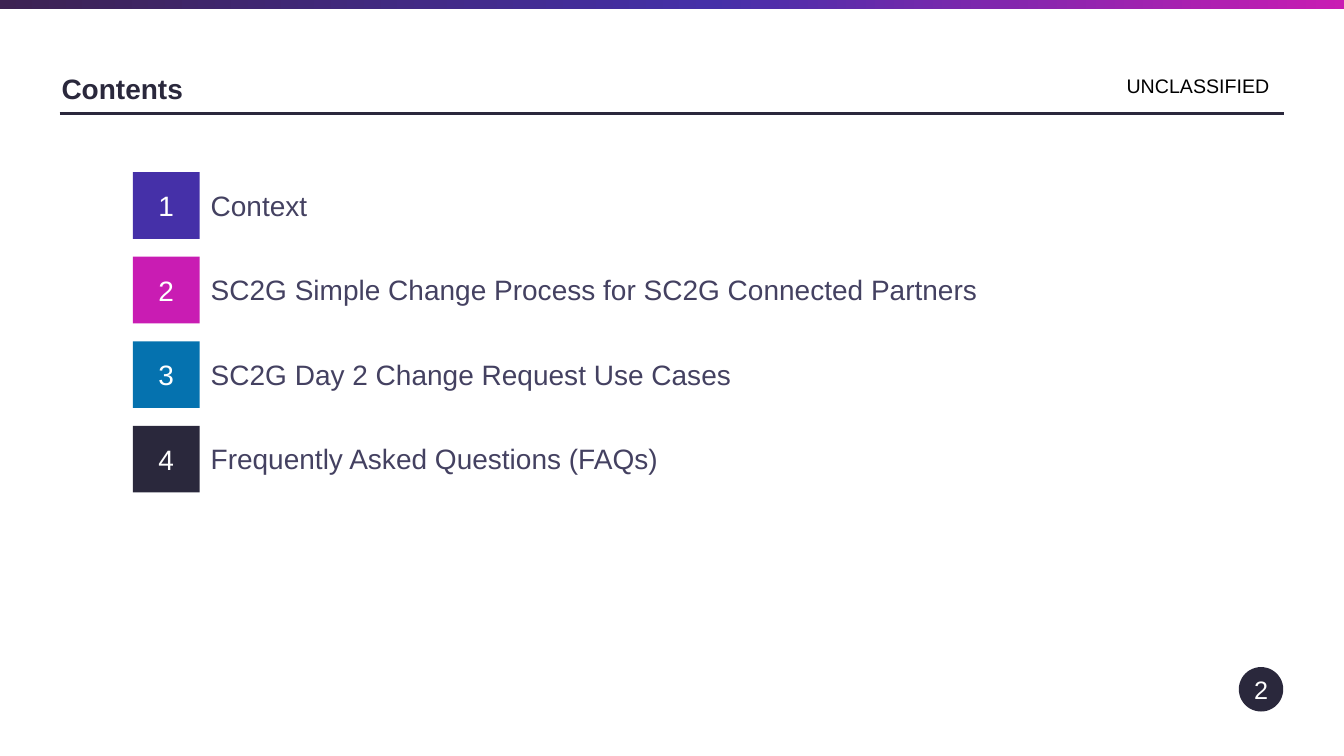
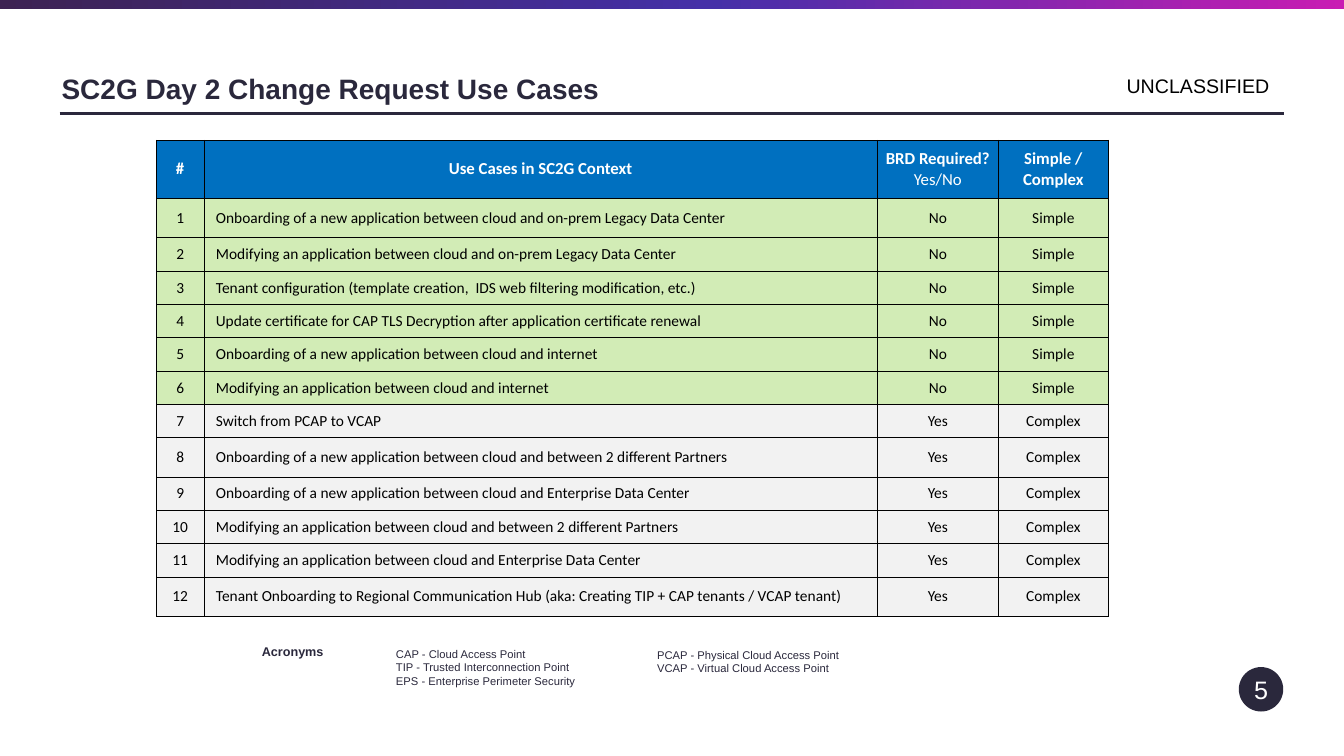
from copy import deepcopy
from dataclasses import dataclass

from lxml import etree
from pptx import Presentation
from pptx.dml.color import RGBColor
from pptx.enum.shapes import MSO_CONNECTOR, MSO_SHAPE
from pptx.enum.text import MSO_ANCHOR, MSO_AUTO_SIZE, PP_ALIGN
from pptx.oxml.ns import qn
from pptx.util import Cm, Pt

LEFT, CENTER = PP_ALIGN.LEFT, PP_ALIGN.CENTER
TOP, MIDDLE = MSO_ANCHOR.TOP, MSO_ANCHOR.MIDDLE
FIXED, GROW = MSO_AUTO_SIZE.NONE, MSO_AUTO_SIZE.SHAPE_TO_FIT_TEXT
RECT, OVAL = MSO_SHAPE.RECTANGLE, MSO_SHAPE.OVAL
STRAIGHT = MSO_CONNECTOR.STRAIGHT
TITLE_ONLY = 5


@dataclass(frozen=True)
class Theme:
    font: str = "Arial"
    table_font: str = "Calibri"
    ink: str = "2A283C"
    label: str = "444161"
    white: str = "FFFFFF"
    black: str = "000000"
    violet: str = "4530A8"
    magenta: str = "C91CB3"
    blue: str = "0572AF"
    band: tuple = ((0, "3D2252"), (0.53, "4530A8"), (1, "C91CB3"))
    header: str = "0070C0"
    simple: str = "D2ECB6"
    complex: str = "F2F2F2"
    heading: int = 20
    page: int = 18
    marking: int = 14
    table_header: int = 12
    table_body: int = 11
    acronym_title: int = 9
    acronym: int = 8


THEME = Theme()
NO_MARGINS = dict(margin_left=0, margin_top=0, margin_right=0, margin_bottom=0)
MARKING = "UNCLASSIFIED"

# label, label width in cm, number colour
CONTENTS = [
    ("Context", 2.97, THEME.violet),
    ("SC2G Simple Change Process for SC2G Connected Partners", 20.19, THEME.magenta),
    ("SC2G Day 2 Change Request Use Cases", 13.74, THEME.blue),
    ("Frequently Asked Questions (FAQs)", 11.86, THEME.ink),
]

USE_CASE_HEADER = [
    [("#", True)],
    [("Use Cases in SC2G Context", True)],
    [("BRD Required?", True), ("Yes/No", False)],
    [("Simple /", True), ("Complex", True)],
]
SIMPLE_CASES = [
    "Onboarding of a new application between cloud and on-prem Legacy Data Center",
    "Modifying an application between cloud and on-prem Legacy Data Center",
    "Tenant configuration (template creation,  IDS web filtering modification, etc.)",
    "Update certificate for CAP TLS Decryption after application certificate renewal",
    "Onboarding of a new application between cloud and internet",
    "Modifying an application between cloud and internet",
]
COMPLEX_CASES = [
    "Switch from PCAP to VCAP",
    "Onboarding of a new application between cloud and between 2 different Partners",
    "Onboarding of a new application between cloud and Enterprise Data Center",
    "Modifying an application between cloud and between 2 different Partners",
    "Modifying an application between cloud and Enterprise Data Center",
    "Tenant Onboarding to Regional Communication Hub (aka: Creating TIP + CAP tenants / VCAP tenant)",
]
CASE_GROUPS = [
    (SIMPLE_CASES, "No", "Simple", THEME.simple),
    (COMPLEX_CASES, "Yes", "Complex", THEME.complex),
]
COLUMN_WIDTHS = (1.2, 16.97, 3.05, 2.77)
HEADER_HEIGHT, ROW_HEIGHT, TALL_ROW_HEIGHT = 1.47, 0.84, 0.99
TALL_ROWS = {1, 8, 12}

# box in cm, lines, size, bold
ACRONYMS = [
    ((6.35, 16.1, 3.76, 0.64), ["Acronyms"], THEME.acronym_title, True),
    ((9.73, 16.18, 9.04, 1.27),
     ["CAP - Cloud Access Point", "TIP - Trusted Interconnection Point",
      "EPS - Enterprise Perimeter Security"], THEME.acronym, False),
    ((16.31, 16.21, 8.23, 0.94),
     ["PCAP - Physical Cloud Access Point", "VCAP - Virtual Cloud Access Point"],
     THEME.acronym, False),
]


def rgb(value):
    return RGBColor.from_string(value)


def cm_box(box):
    return [Cm(length) for length in box]


def set_values(target, values):
    for name, value in values.items():
        setattr(target, name, value)


def write(frame, lines, size, color, bold=False, align=LEFT, font=THEME.font):
    """Fill a text frame, one paragraph per line; a line is text or (text, bold)."""
    for index, line in enumerate(lines):
        text, heavy = line if isinstance(line, tuple) else (line, bold)
        paragraph = frame.add_paragraph() if index else frame.paragraphs[0]
        paragraph.alignment = align
        run = paragraph.add_run()
        run.text = text
        set_values(run.font, dict(name=font, size=Pt(size), bold=heavy))
        run.font.color.rgb = rgb(color)


def add_text(slide, box, lines, size, color, bold=False, wrap=True):
    frame = slide.shapes.add_textbox(*cm_box(box)).text_frame
    set_values(frame, dict(word_wrap=wrap, auto_size=GROW, vertical_anchor=TOP))
    write(frame, lines, size, color, bold)


def add_badge(slide, preset, box, number, size, color):
    badge = slide.shapes.add_shape(preset, *cm_box(box))
    badge.shadow.inherit = False
    badge.fill.solid()
    badge.fill.fore_color.rgb = rgb(color)
    badge.line.fill.background()
    set_values(badge.text_frame, dict(NO_MARGINS, vertical_anchor=MIDDLE))
    write(badge.text_frame, [str(number)], size, THEME.white, align=CENTER)


def dress_layout(layout, slide):
    """Draw the top band and title rule, then move them to the shared layout."""
    band = slide.shapes.add_shape(RECT, *cm_box((-0.02, 0, 33.91, 0.23)))
    band.shadow.inherit = False
    band.line.fill.background()
    band.fill.gradient()
    band.fill.gradient_angle = 0
    stops = band.element.spPr.find(".//" + qn("a:gsLst"))
    stops.insert(1, deepcopy(stops[0]))
    for stop, (position, color) in zip(band.fill.gradient_stops, THEME.band):
        stop.position = position
        stop.color.rgb = rgb(color)

    rule = slide.shapes.add_connector(STRAIGHT, *cm_box((1.5, 2.87, 32.36, 2.87)))
    rule.line.color.rgb = rgb(THEME.ink)
    rule.line.width = Pt(2.25)
    etree.SubElement(rule.element.spPr, qn("a:effectLst"))
    for part in (band, rule):
        layout.element.cSld.spTree.append(part.element)


def add_slide(prs, title, page):
    slide = prs.slides.add_slide(prs.slide_layouts[TITLE_ONLY])
    heading = slide.shapes.title
    places = cm_box((1.55, 1.45, 30.89, 1.4))
    set_values(heading, dict(zip(("left", "top", "width", "height"), places)))
    set_values(heading.text_frame, dict(NO_MARGINS, word_wrap=True,
                                        auto_size=FIXED, vertical_anchor=MIDDLE))
    write(heading.text_frame, [title], THEME.heading, THEME.ink, bold=True)
    heading.text_frame.paragraphs[0].line_spacing = 1.2
    add_text(slide, (28.14, 1.73, 4.19, 0.86), [MARKING], THEME.marking, THEME.black)
    add_badge(slide, OVAL, (31.22, 16.81, 1.12, 1.12), page, THEME.page, THEME.ink)
    return slide


def add_contents(slide):
    left, top, side, pitch = 3.35, 4.34, 1.68, 2.13
    for index, (label, width, color) in enumerate(CONTENTS):
        y = top + index * pitch
        add_badge(slide, RECT, (left, y, side, side), index + 1, THEME.heading, color)
        add_text(slide, (5.06, y + 0.28, width, 1.12), [label],
                 THEME.heading, THEME.label, wrap=False)


def add_borders(cell):
    properties = cell._tc.get_or_add_tcPr()
    for index, edge in enumerate(("a:lnL", "a:lnR", "a:lnT", "a:lnB")):
        line = etree.Element(qn(edge), w=str(Pt(0.5)))
        fill = etree.SubElement(line, qn("a:solidFill"))
        etree.SubElement(fill, qn("a:srgbClr"), val=THEME.black)
        properties.insert(index, line)


def add_use_cases(slide):
    rows = [(USE_CASE_HEADER, THEME.header)]
    for cases, required, kind, color in CASE_GROUPS:
        for case in cases:
            rows.append(([[str(len(rows))], [case], [required], [kind]], color))
    heights = [HEADER_HEIGHT] + [TALL_ROW_HEIGHT if number in TALL_ROWS else ROW_HEIGHT
                                 for number in range(1, len(rows))]
    box = cm_box((3.94, 3.53, sum(COLUMN_WIDTHS), sum(heights)))
    table = slide.shapes.add_table(len(rows), len(COLUMN_WIDTHS), *box).table
    table.horz_banding = False
    for column, width in zip(table.columns, COLUMN_WIDTHS):
        column.width = Cm(width)

    for r, (texts, color) in enumerate(rows):
        table.rows[r].height = Cm(heights[r])
        size = THEME.table_body if r else THEME.table_header
        ink = THEME.black if r else THEME.white
        for c, lines in enumerate(texts):
            cell = table.cell(r, c)
            is_case = r > 0 and c == 1
            set_values(cell, dict(NO_MARGINS, vertical_anchor=MIDDLE))
            if is_case:
                cell.margin_left = Cm(0.3)
            cell.fill.solid()
            cell.fill.fore_color.rgb = rgb(color)
            add_borders(cell)
            write(cell.text_frame, lines, size, ink, font=THEME.table_font,
                  align=LEFT if is_case else CENTER)


def main():
    prs = Presentation()
    prs.slide_width, prs.slide_height = Cm(33.87), Cm(19.05)

    contents = add_slide(prs, "Contents", 2)
    dress_layout(prs.slide_layouts[TITLE_ONLY], contents)
    add_contents(contents)

    use_cases = add_slide(prs, "SC2G Day 2 Change Request Use Cases", 5)
    add_use_cases(use_cases)
    for box, lines, size, bold in ACRONYMS:
        add_text(use_cases, box, lines, size, THEME.ink, bold)

    prs.save("out.pptx")


if __name__ == "__main__":
    main()
